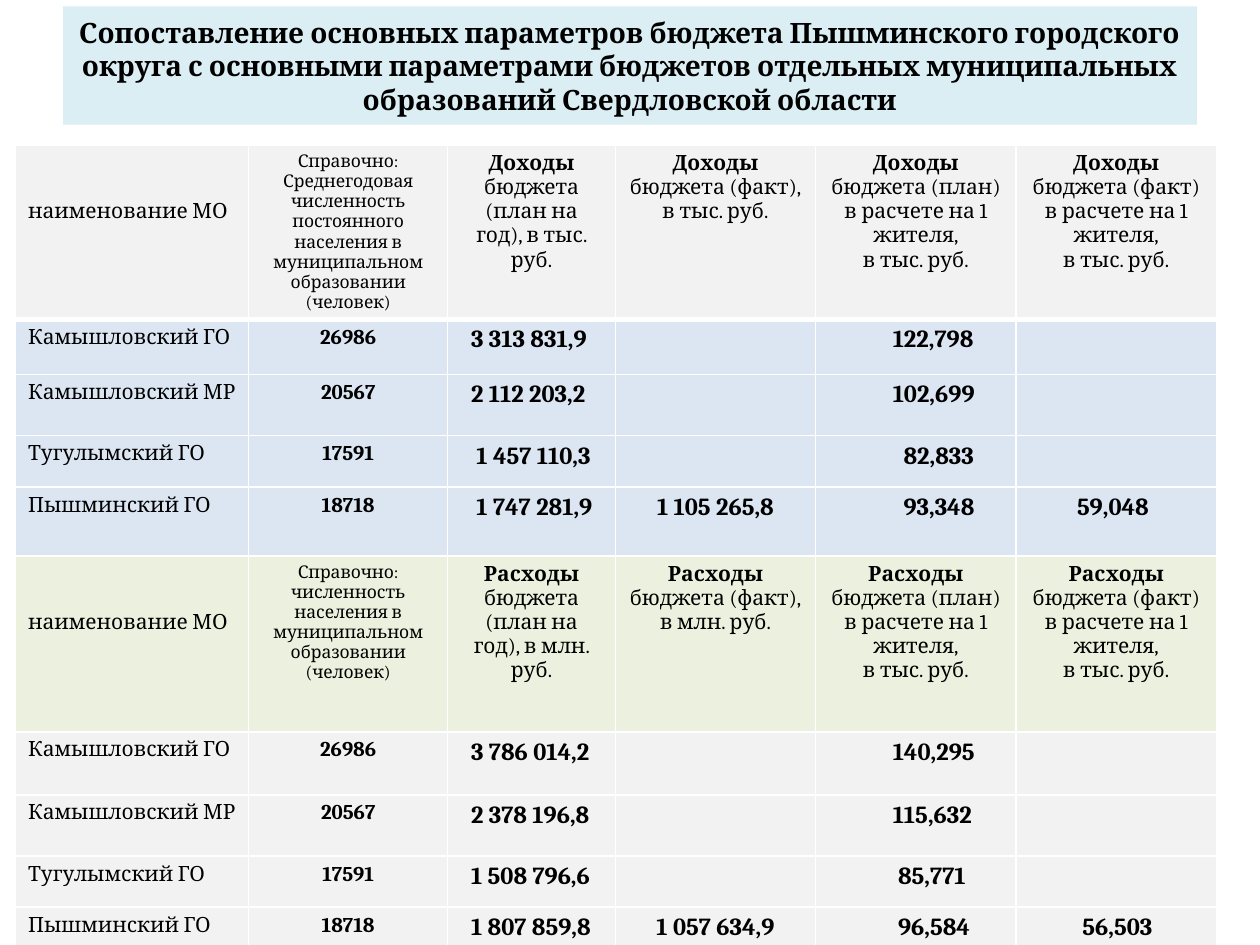
from lxml import etree
from pptx import Presentation
from pptx.dml.color import RGBColor
from pptx.enum.text import MSO_ANCHOR, PP_ALIGN
from pptx.oxml.ns import qn
from pptx.util import Pt

CENTER, LEFT, MIDDLE = PP_ALIGN.CENTER, PP_ALIGN.LEFT, MSO_ANCHOR.MIDDLE
FONT = "Cambria"
COLORS = {"title": "DBEEF4", "text": "000000", "border": "FFFFFF",
          "gray": "F2F2F2", "blue": "DCE6F2", "green": "EBF1DE"}
TITLE = ("Сопоставление основных параметров бюджета Пышминского городского округа "
         "с основными параметрами бюджетов отдельных муниципальных образований "
         "Свердловской области")
COLUMN_WIDTHS = [133.2, 113.8, 95.8, 114.5, 114.5, 114.5]
CELL_MARGIN = 7.2
SPACE = 3.07  # step of the left indents of the amounts

# Each amount is a pair: text and number of indent steps; None centres it.
SECTIONS = [
    {
        "kind": "Доходы", "unit": "тыс.",
        "population": "Среднегодовая численность постоянного населения "
                      "в муниципальном образовании (человек)",
        "header_fill": "gray", "body_fill": "blue", "header_border": 3,
        "heights": [99, 31.5, 35, 29, 39.5],
        "rows": [
            ("Камышловский ГО", "26986", ("3 313 831,9", 2), None, ("122,798", 12), None),
            ("Камышловский МР", "20567", ("2 112 203,2", 2), None, ("102,699", 12), None),
            ("Тугулымский ГО", "17591", ("1 457 110,3", 3), None, ("82,833", 14), None),
            ("Пышминский ГО", "18718", ("1 747 281,9", 3), ("1 105 265,8", None),
             ("93,348", 14), ("59,048", 9)),
        ],
    },
    {
        "kind": "Расходы", "unit": "млн.",
        "population": "численность населения в муниципальном образовании (человек)",
        "header_fill": "green", "body_fill": "gray", "header_border": 1,
        "heights": [100.5, 36, 35, 29, 36],
        "rows": [
            ("Камышловский ГО", "26986", ("3 786 014,2", 2), None, ("140,295", 12), None),
            ("Камышловский МР", "20567", ("2 378 196,8", 2), None, ("115,632", 12), None),
            ("Тугулымский ГО", "17591", ("1 508 796,6", 2), None, ("85,771", 13), None),
            ("Пышминский ГО", "18718", ("1 807 859,8", 2), ("1 057 634,9", None),
             ("96,584", 13), ("56,503", 10)),
        ],
    },
]


def color(name):
    return RGBColor.from_string(COLORS[name])


def format_run(run, size, bold=False):
    run.font.name = FONT
    run.font.size = Pt(size)
    run.font.bold = bold
    run.font.color.rgb = color("text")


def set_borders(cell, top, bottom):
    """Draw the four cell borders; they must precede the fill in tcPr."""
    properties = cell._tc.get_or_add_tcPr()
    widths = {"a:lnL": 1, "a:lnR": 1, "a:lnT": top, "a:lnB": bottom}
    for index, (tag, width) in enumerate(widths.items()):
        line = etree.Element(qn(tag), w=str(Pt(width)))
        fill = etree.SubElement(line, qn("a:solidFill"))
        etree.SubElement(fill, qn("a:srgbClr"), val=COLORS["border"])
        properties.insert(index, line)


def write_cell(cell, lines, size, bold=False, align=LEFT, lead=""):
    """Write one paragraph per line, with an optional bold lead word."""
    cell.text_frame.text = "\n".join(lines)
    for index, paragraph in enumerate(cell.text_frame.paragraphs):
        paragraph.alignment = align
        if index == 0 and lead:
            paragraph.text = lead
            paragraph.add_run().text = " " + lines[0]
        for run in paragraph.runs:
            format_run(run, size, bold)
        if index == 0 and lead:
            paragraph.runs[0].font.bold = True


def fill_header(cells, section):
    write_cell(cells[0], ["наименование МО"], 12)
    cells[0].margin_top = Pt(31.2)
    write_cell(cells[1], ["Справочно:", section["population"]], 10, align=CENTER)
    unit = f"в {section['unit']} руб."
    per_person = ["в расчете на 1 жителя,", "в тыс. руб."]
    captions = [
        [f"бюджета (план на год), {unit}"],
        ["бюджета (факт),", unit],
        ["бюджета (план)"] + per_person,
        ["бюджета (факт)"] + per_person,
    ]
    for cell, lines in zip(cells[2:], captions):
        write_cell(cell, lines, 12, align=CENTER, lead=section["kind"])


def fill_body_row(cells, values):
    write_cell(cells[0], [values[0]], 12)
    write_cell(cells[1], [values[1]], 12, bold=True, align=CENTER)
    for cell, amount in zip(cells[2:], values[2:]):
        if amount is None:
            continue
        text, indent = amount
        write_cell(cell, [text], 14, bold=True, align=CENTER if indent is None else LEFT)
        if indent is not None:
            cell.margin_left = Pt(round(CELL_MARGIN + indent * SPACE, 2))


def add_title(slide, left, top, width, height):
    title = slide.shapes.title
    title.left, title.top, title.width, title.height = map(Pt, (left, top, width, height))
    title.fill.solid()
    title.fill.fore_color.rgb = color("title")
    frame = title.text_frame
    frame.text = TITLE
    frame.word_wrap = True
    frame.vertical_anchor = MIDDLE
    frame.paragraphs[0].alignment = CENTER
    format_run(frame.paragraphs[0].runs[0], 16, bold=True)


def add_budget_table(slide, left, top):
    heights = [height for section in SECTIONS for height in section["heights"]]
    table = slide.shapes.add_table(
        len(heights), len(COLUMN_WIDTHS), Pt(left), Pt(top),
        Pt(sum(COLUMN_WIDTHS)), Pt(sum(heights))).table
    table.first_row = table.horz_banding = False
    for column, width in zip(table.columns, COLUMN_WIDTHS):
        column.width = Pt(width)
    for row, height in zip(table.rows, heights):
        row.height = Pt(height)

    rows = iter(table.rows)
    top_border = 1
    for section in SECTIONS:
        for index in range(len(section["heights"])):
            cells = list(next(rows).cells)
            bottom_border = 1 if index else section["header_border"]
            for cell in cells:
                cell.fill.solid()
                cell.fill.fore_color.rgb = color(
                    section["body_fill" if index else "header_fill"])
                set_borders(cell, top_border, bottom_border)
            top_border = bottom_border
            if index:
                fill_body_row(cells, section["rows"][index - 1])
            else:
                fill_header(cells, section)


def main():
    presentation = Presentation()
    presentation.slide_width, presentation.slide_height = Pt(720), Pt(540)
    slide = presentation.slides.add_slide(presentation.slide_layouts[5])
    add_title(slide, 36, 3.6, 648, 67.7)
    add_budget_table(slide, 8.9, 83)
    presentation.save("out.pptx")


if __name__ == "__main__":
    main()
